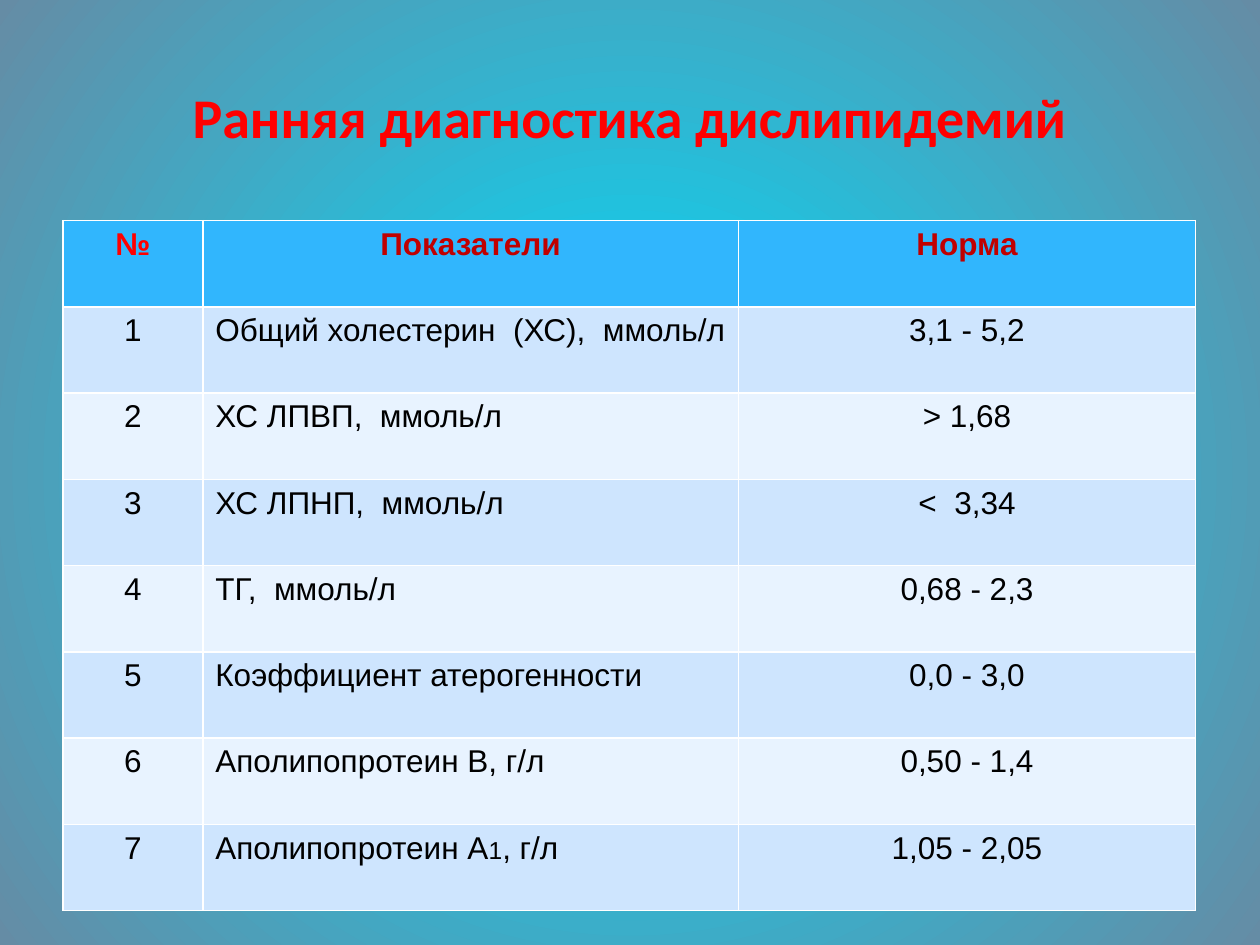
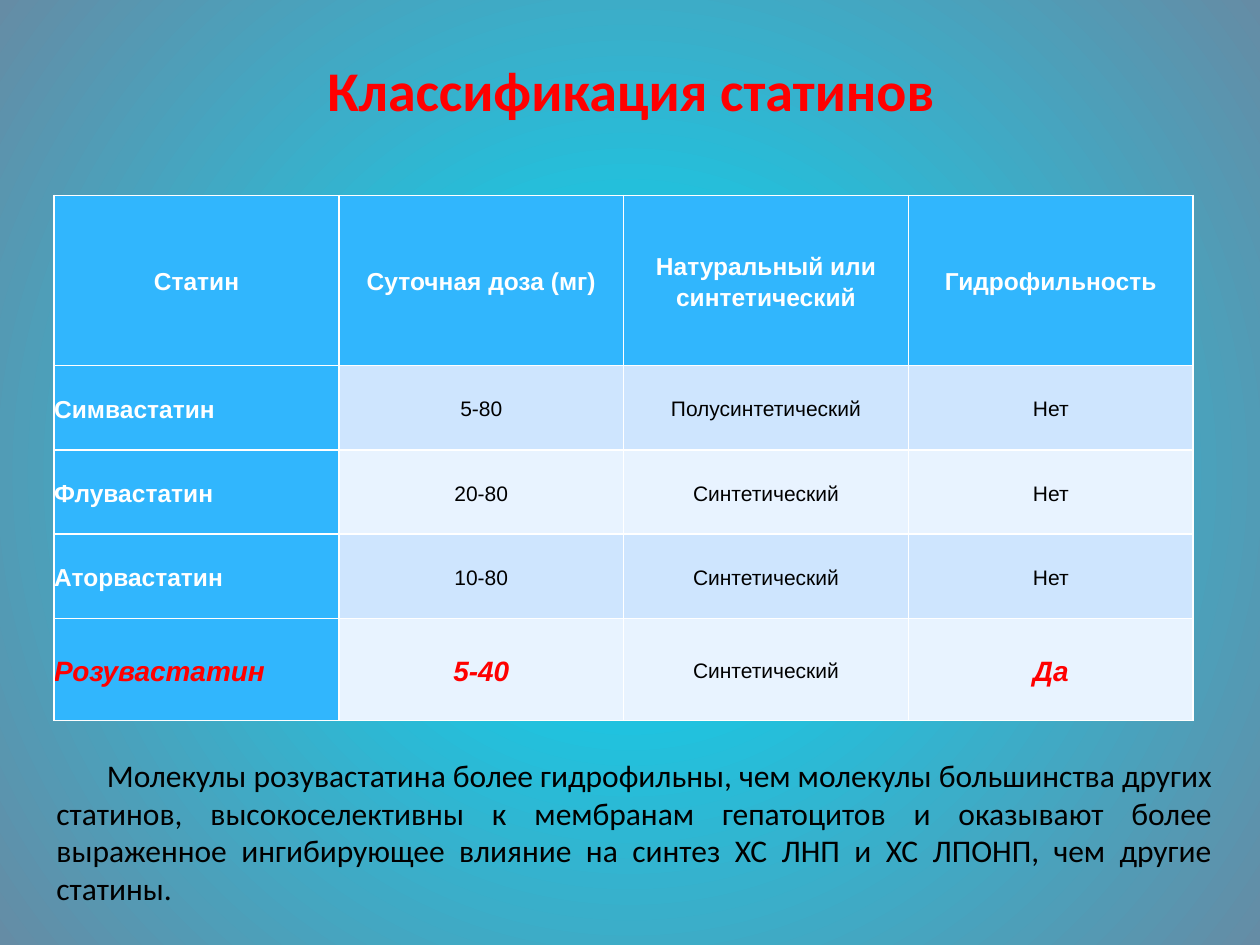
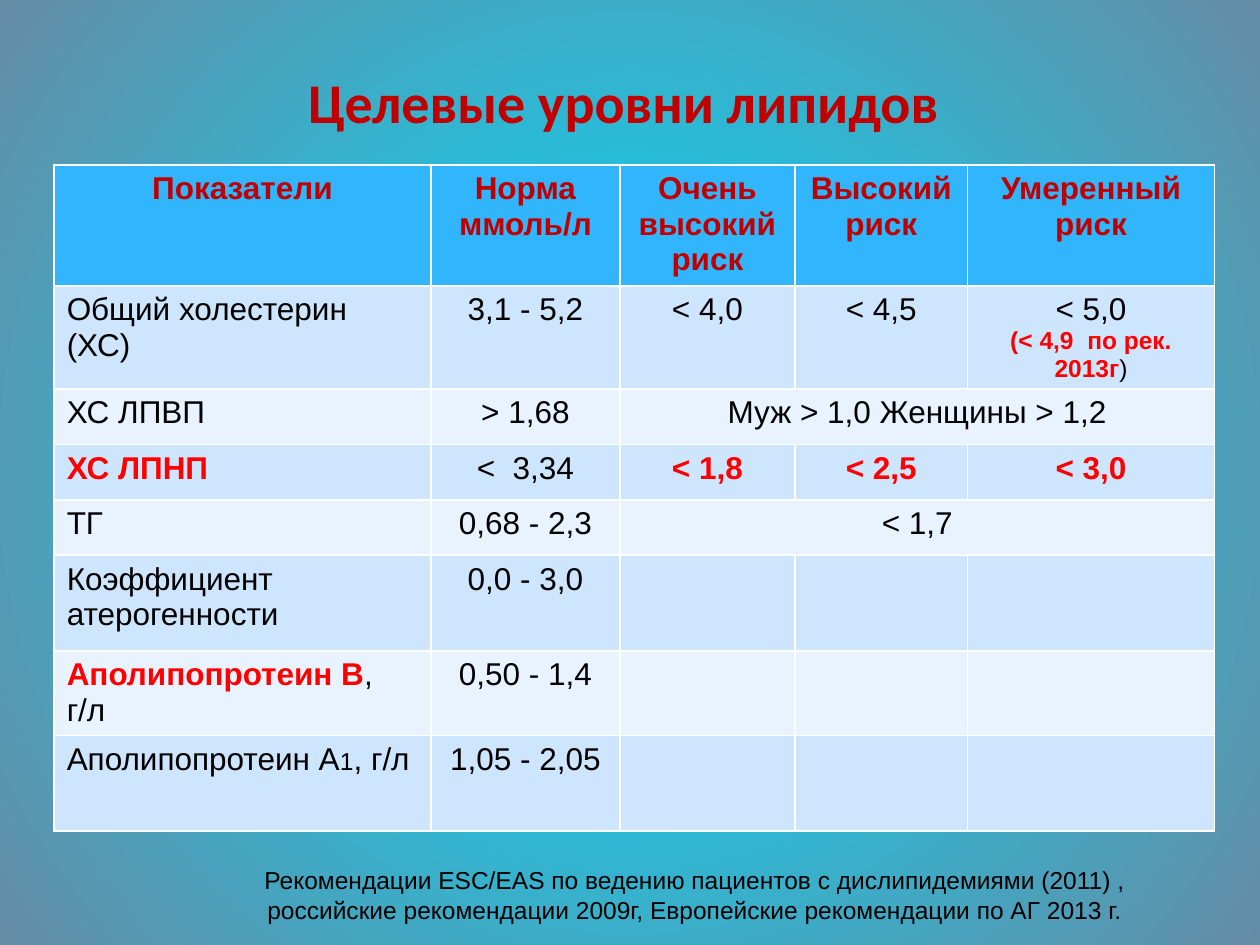
from lxml.etree import SubElement
from pptx import Presentation
from pptx.dml.color import RGBColor
from pptx.enum.text import MSO_ANCHOR, PP_ALIGN
from pptx.oxml.ns import qn
from pptx.util import Inches, Pt

RED = RGBColor(0xFF, 0x00, 0x00)
DARK_RED = RGBColor(0xC0, 0x00, 0x00)
BLACK = RGBColor(0x00, 0x00, 0x00)
WHITE = RGBColor(0xFF, 0xFF, 0xFF)
HEADER_BLUE = RGBColor(0x31, 0xB6, 0xFD)
BAND_COLORS = [RGBColor(0xE8, 0xF3, 0xFF), RGBColor(0xCE, 0xE5, 0xFE)]
GLOW = RGBColor(0x00, 0xDC, 0xFA)
EDGE = RGBColor(0x65, 0x8C, 0xA5)


def write(text_frame, text, size, color=BLACK, bold=False, italic=False,
          alignment=PP_ALIGN.CENTER, font="Arial"):
    """Fill the frame, one paragraph per line of text, in a single style."""
    text_frame.word_wrap = True
    text_frame.text = text
    for paragraph in text_frame.paragraphs:
        paragraph.alignment = alignment
        paragraph.font.name = font
        paragraph.font.size = Pt(size)
        paragraph.font.color.rgb = color
        paragraph.font.bold = bold
        paragraph.font.italic = italic


def add_table_slide(title, title_box, title_color, table_origin, widths, heights):
    """Add a titled slide with an empty banded table; return both."""
    slide = presentation.slides.add_slide(presentation.slide_layouts[5])
    heading = slide.shapes.title
    heading.left, heading.top, heading.width, heading.height = map(Inches, title_box)
    heading.text_frame.vertical_anchor = MSO_ANCHOR.MIDDLE
    write(heading.text_frame, title, 32, title_color, bold=True, font="Calibri")

    left, top = map(Inches, table_origin)
    table = slide.shapes.add_table(len(heights), len(widths), left, top,
                                   Inches(sum(widths)), Inches(sum(heights))).table
    for column, width in zip(table.columns, widths):
        column.width = Inches(width)
    for row_index, (row, height) in enumerate(zip(table.rows, heights)):
        row.height = Inches(height)
        for cell in row.cells:
            cell.fill.solid()
            cell.fill.fore_color.rgb = BAND_COLORS[row_index % 2] if row_index else HEADER_BLUE
    return slide, table


presentation = Presentation()
presentation.slide_width = Inches(10)
presentation.slide_height = Inches(7.5)

# Radial background shared by all slides
master = presentation.slide_master
background_fill = master.background.fill
background_fill.gradient()
for stop, color in zip(background_fill.gradient_stops, (GLOW, EDGE)):
    stop.color.rgb = color
gradient = master.element.find(".//" + qn("a:gradFill"))
gradient.remove(gradient.find(qn("a:lin")))
radial = SubElement(gradient, qn("a:path"), {"path": "circle"})
SubElement(radial, qn("a:fillToRect"), {side: "50000" for side in "ltrb"})

# Slide 1: early diagnosis
slide, diagnosis_table = add_table_slide(
    "Ранняя диагностика дислипидемий", (0.5, 0.3, 9, 1.25), RED,
    (0.5, 1.75), [1.11, 4.25, 3.63], [5.48 / 8] * 8)
indicators = [
    ("Общий холестерин  (ХС),  ммоль/л", "3,1 - 5,2"),
    ("ХС ЛПВП,  ммоль/л", "˃ 1,68"),
    ("ХС ЛПНП,  ммоль/л", "˂  3,34"),
    ("ТГ,  ммоль/л", "0,68 - 2,3"),
    ("Коэффициент атерогенности", "0,0 - 3,0"),
    ("Аполипопротеин В, г/л", "0,50 - 1,4"),
    ("Аполипопротеин А", "1,05 - 2,05"),
]
for column, (text, color) in enumerate(
        [("№", RED), ("Показатели", DARK_RED), ("Норма", DARK_RED)]):
    write(diagnosis_table.cell(0, column).text_frame, text, 18, color, bold=True)
for number, (indicator, norm) in enumerate(indicators, start=1):
    write(diagnosis_table.cell(number, 0).text_frame, str(number), 18)
    write(diagnosis_table.cell(number, 1).text_frame, indicator, 18, alignment=PP_ALIGN.LEFT)
    write(diagnosis_table.cell(number, 2).text_frame, norm, 18)

# Slide 2: statins
slide, statin_table = add_table_slide(
    "Классификация статинов", (0.51, 0.52, 9, 0.38), RED,
    (0.43, 1.55), [2.26] * 4, [1.35, 0.67, 0.67, 0.67, 0.81])
statins = [
    ("Статин", "Суточная доза (мг)", "Натуральный или синтетический", "Гидрофильность"),
    ("Симвастатин", "5-80", "Полусинтетический", "Нет"),
    ("Флувастатин", "20-80", "Синтетический", "Нет"),
    ("Аторвастатин", "10-80", "Синтетический", "Нет"),
    ("Розувастатин", "5-40", "Синтетический", "Да"),
]
for row, texts in enumerate(statins):
    for column, text in enumerate(texts):
        cell = statin_table.cell(row, column)
        cell.vertical_anchor = MSO_ANCHOR.MIDDLE
        cell.margin_left = cell.margin_right = cell.margin_top = cell.margin_bottom = 0
        alignment = PP_ALIGN.LEFT if row and column == 0 else PP_ALIGN.CENTER
        if column == 0:
            cell.fill.fore_color.rgb = HEADER_BLUE
        if row == 4 and column != 2:
            write(cell.text_frame, text, 16, RED, bold=True, italic=True, alignment=alignment)
        elif row == 0 or column == 0:
            write(cell.text_frame, text, 14, WHITE, bold=True, alignment=alignment)
        else:
            write(cell.text_frame, text, 12)
        cell.text_frame.paragraphs[0].line_spacing = 1.15

conclusion = slide.shapes.add_textbox(Inches(0.35), Inches(5.95), Inches(9.37), Inches(1.3))
write(conclusion.text_frame,
      "Молекулы розувастатина более гидрофильны, чем молекулы большинства других "
      "статинов, высокоселективны к мембранам гепатоцитов и оказывают более "
      "выраженное ингибирующее влияние на синтез ХС ЛНП и ХС ЛПОНП, чем другие статины.",
      18, alignment=PP_ALIGN.JUSTIFY, font="Calibri")
paragraph_properties = conclusion.text_frame.paragraphs[0]._p.get_or_add_pPr()
paragraph_properties.set("indent", str(Inches(0.4)))

# Slide 3: target levels
slide, target_table = add_table_slide(
    "Целевые уровни липидов", (0.5, 0.3, 8.9, 1.01), DARK_RED,
    (0.43, 1.31), [2.99, 1.5, 1.39, 1.37, 1.96],
    [0.96, 0.81, 0.44, 0.44, 0.44, 0.76, 0.67, 0.76])
targets = [
    ("Показатели", "Норма\nммоль/л", "Очень высокий риск", "Высокий риск", "Умеренный риск"),
    ("Общий холестерин\n(ХС)", "3,1 - 5,2", "< 4,0", "< 4,5", "< 5,0\n(< 4,9  по рек. 2013г"),
    ("ХС ЛПВП", "˃ 1,68", "Муж > 1,0 Женщины > 1,2"),
    ("ХС ЛПНП", "˂  3,34", "< 1,8", "< 2,5", "< 3,0"),
    ("ТГ", "0,68 - 2,3", "< 1,7"),
    ("Коэффициент атерогенности", "0,0 - 3,0"),
    ("Аполипопротеин В", "0,50 - 1,4"),
    ("Аполипопротеин А", "1,05 - 2,05"),
]
for row, texts in enumerate(targets):
    if len(texts) == 3:
        target_table.cell(row, 2).merge(target_table.cell(row, 4))
    for column, text in enumerate(texts):
        is_key = row == 3 and column != 1
        color = DARK_RED if row == 0 else RED if is_key else BLACK
        alignment = PP_ALIGN.LEFT if row and column == 0 else PP_ALIGN.CENTER
        write(target_table.cell(row, column).text_frame, text, 18, color,
              bold=row == 0 or is_key, alignment=alignment)

recommendation = target_table.cell(1, 4).text_frame.paragraphs[1]
recommendation.font.size = Pt(14)
apolipoprotein_b = target_table.cell(6, 0).text_frame.paragraphs[0]
for paragraph, ending in [(recommendation, ")"), (apolipoprotein_b, ", г/л")]:
    paragraph.runs[0].font.color.rgb = RED
    paragraph.runs[0].font.bold = True
    paragraph.add_run().text = ending

# Small index of apolipoprotein A1 in both indicator tables
for cell in (diagnosis_table.cell(7, 1), target_table.cell(7, 0)):
    paragraph = cell.text_frame.paragraphs[0]
    index_run = paragraph.add_run()
    index_run.text = "1"
    index_run.font.size = Pt(14)
    paragraph.add_run().text = ", г/л"

references = slide.shapes.add_textbox(Inches(1.46), Inches(6.82), Inches(8.11), Inches(0.57))
write(references.text_frame,
      "Рекомендации ESC/EAS по ведению пациентов с дислипидемиями (2011) , "
      "российские рекомендации 2009г, Европейские рекомендации по АГ 2013 г.", 14)

presentation.save("out.pptx")
